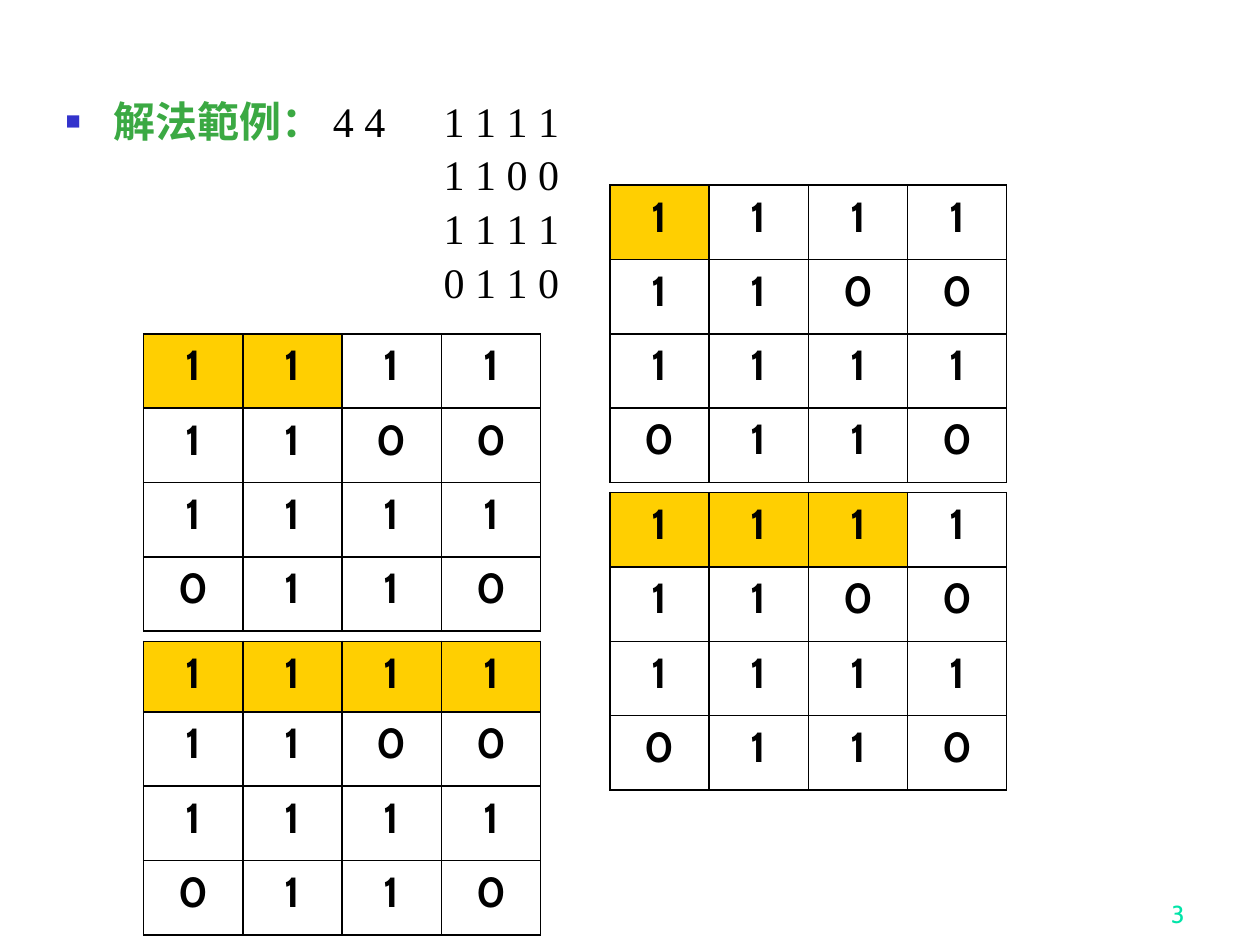
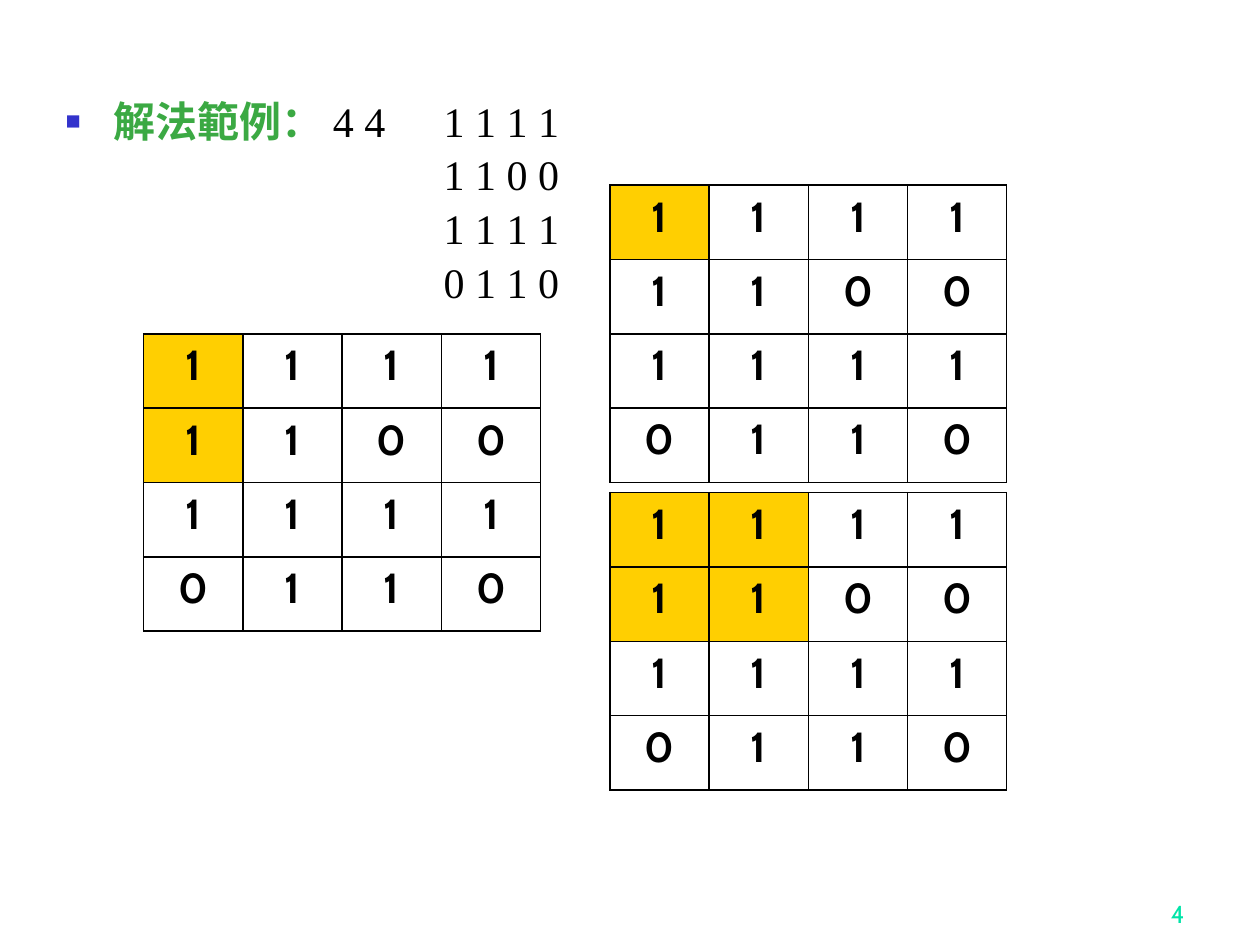
from lxml.etree import SubElement
from pptx import Presentation
from pptx.dml.color import RGBColor
from pptx.enum.text import MSO_ANCHOR, MSO_AUTO_SIZE, PP_ALIGN
from pptx.oxml import parse_xml
from pptx.oxml.ns import nsdecls, qn
from pptx.util import Inches, Pt

BLACK = RGBColor(0x00, 0x00, 0x00)
WHITE = RGBColor(0xFF, 0xFF, 0xFF)
GOLD = RGBColor(0xFF, 0xCF, 0x01)
GREEN = RGBColor(0x3B, 0xA9, 0x43)
BLUE = RGBColor(0x33, 0x33, 0xCC)
MINT = RGBColor(0x00, 0xE4, 0xA8)

SERIF = "Times New Roman"
SANS = "Cabin"

MATRIX = ["1111", "1100", "1111", "0110"]
CELL_HEIGHT = 0.59
GRID_WIDTH = 3.15
EVEN_ROWS = [CELL_HEIGHT] * 4
SHORT_TOP_ROWS = [0.56] + [CELL_HEIGHT] * 3

BODY_BOX = (0.42, 0.75, 8.83, 6.15)
NUMBER_BOX = (7.42, 6.92, 2.08, 0.5)
TOP_RIGHT = (4.84, 1.47)
BOTTOM_RIGHT = (4.84, 3.91)
TOP_LEFT = (1.14, 2.65)
BOTTOM_LEFT = (1.14, 5.09)


def add_span(para, text, font, size, color, bold=False):
    span = para.add_run()
    span.text = text
    span.font.name = font
    span.font.size = Pt(size)
    span.font.bold = bold
    span.font.color.rgb = color


def set_indent(para, margin, first_line=0):
    props = para._p.get_or_add_pPr()
    props.set("marL", str(Inches(margin)))
    props.set("indent", str(Inches(first_line)))
    return props


def add_square_bullet(props):
    color = SubElement(props, qn("a:buClr"))
    SubElement(color, qn("a:srgbClr"), val=str(BLUE))
    SubElement(props, qn("a:buSzPct"), val="60000")
    SubElement(props, qn("a:buChar"), char="■")


def add_sample_input(page, box):
    body = page.placeholders[1]
    body.left, body.top, body.width, body.height = map(Inches, box)
    frame = body.text_frame
    frame.auto_size = MSO_AUTO_SIZE.NONE
    for index, digits in enumerate(MATRIX):
        row_text = " ".join(digits)
        para = frame.add_paragraph() if index else frame.paragraphs[0]
        para.line_spacing = 0.9
        if index:
            SubElement(set_indent(para, 3), qn("a:buNone"))
        else:
            add_square_bullet(set_indent(para, 0.38, -0.38))
            add_span(para, "解法範例： ", SERIF, 24, GREEN, bold=True)
            row_text = "4 4 \t" + row_text
        add_span(para, row_text, SERIF, 24, BLACK)


def add_page_number(page, box, number):
    frame = page.shapes.add_textbox(*map(Inches, box)).text_frame
    frame.word_wrap = True
    frame.vertical_anchor = MSO_ANCHOR.BOTTOM
    para = frame.paragraphs[0]
    para.alignment = PP_ALIGN.RIGHT
    add_span(para, str(number), SANS, 14, MINT)


def add_borders(cell):
    props = cell._tc.get_or_add_tcPr()
    for position, side in enumerate("LRTB"):
        props.insert(position, parse_xml(
            f'<a:ln{side} {nsdecls("a")} w="{Pt(1)}"><a:solidFill>'
            f'<a:srgbClr val="{BLACK}"/></a:solidFill></a:ln{side}>'))


def add_matrix(page, corner, marked_rows, marked_columns, row_heights=EVEN_ROWS):
    left, top = map(Inches, corner)
    table = page.shapes.add_table(
        len(MATRIX), len(MATRIX[0]), left, top,
        Inches(GRID_WIDTH), Inches(sum(row_heights))).table
    for row, digits in enumerate(MATRIX):
        table.rows[row].height = Inches(row_heights[row])
        for column, digit in enumerate(digits):
            cell = table.cell(row, column)
            marked = row < marked_rows and column < marked_columns
            cell.fill.solid()
            cell.fill.fore_color.rgb = GOLD if marked else WHITE
            add_borders(cell)
            para = cell.text_frame.paragraphs[0]
            para.alignment = PP_ALIGN.CENTER
            add_span(para, digit, SANS, 24, BLACK, bold=True)


def add_example_page(deck, number, matrices):
    page = deck.slides.add_slide(deck.slide_layouts[1])
    title = page.shapes.title._element
    title.getparent().remove(title)
    add_page_number(page, NUMBER_BOX, number)
    add_sample_input(page, BODY_BOX)
    for matrix in matrices:
        add_matrix(page, *matrix)


def main():
    deck = Presentation()
    deck.slide_width = Inches(10)
    deck.slide_height = Inches(7.5)
    add_example_page(deck, 3, [
        (TOP_RIGHT, 1, 1),
        (BOTTOM_RIGHT, 1, 3),
        (TOP_LEFT, 1, 2),
        (BOTTOM_LEFT, 1, 4, SHORT_TOP_ROWS),
    ])
    add_example_page(deck, 4, [
        (TOP_RIGHT, 1, 1),
        (BOTTOM_RIGHT, 2, 2),
        (TOP_LEFT, 2, 1),
    ])
    deck.save("out.pptx")


if __name__ == "__main__":
    main()
